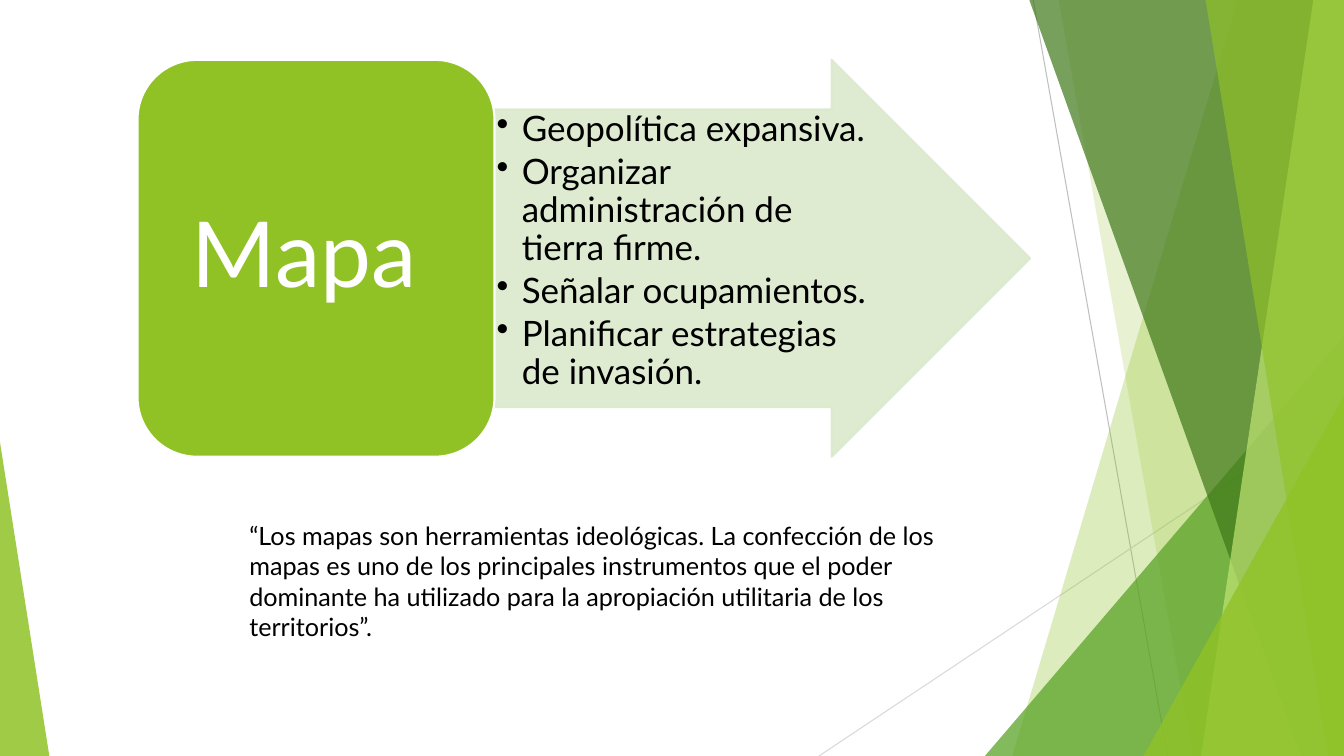
from dataclasses import dataclass

from lxml import etree
from pptx import Presentation, util as u
from pptx.dml.color import RGBColor
from pptx.enum import shapes, text
from pptx.oxml.ns import qn

PX = 9525
WIDTH, HEIGHT = 1280, 720
FONT = "Lato"
LIME, WHITE, BLACK, PALE = "90C226", "FFFFFF", "000000", "DBE9CD"


@dataclass
class Ray:
    start: tuple[int, int]
    end: tuple[int, int]
    colour: str


@dataclass
class Ribbon:
    """A band from its slanted left side to the right edge of the slide."""
    top: int
    foot: int
    colour: str
    opacity: int


@dataclass
class Wedge:
    """A triangle standing on the bottom edge, its apex at a share of its width."""
    left: int
    top: int
    width: int
    apex: int
    colour: str
    opacity: int


RAYS = [
    Ray((984, 0), (1112, HEIGHT), "BFBFBF"),
    Ray((WIDTH, 387), (780, HEIGHT), "D9D9D9"),
]
FACETS = [
    Ribbon(1179, 964, LIME, 30),
    Ribbon(1008, 1136, LIME, 20),
    Wedge(938, 320, 342, 1, "54A021", 72),
    Ribbon(980, 1239, "3F7819", 70),
    Ribbon(1251, 1144, "C0E474", 70),
    Ribbon(1148, 1265, LIME, 65),
    Wedge(1089, 377, 191, 1, LIME, 80),
    Wedge(0, 421, 47, 0, LIME, 85),
]
PURPOSES = [
    "Geopolítica expansiva.",
    "Organizar administración de tierra firme.",
    "Señalar ocupamientos.",
    "Planificar estrategias de invasión.",
]
QUOTE = (
    "“Los mapas son herramientas ideológicas. La confección de los mapas es uno "
    "de los principales instrumentos que el poder dominante ha utilizado para la "
    "apropiación utilitaria de los territorios”."
)


def px(*lengths: int) -> list[u.Emu]:
    return [u.Emu(length * PX) for length in lengths]


def paint(colour_format, colour: str, opacity: int = 100) -> None:
    colour_format.rgb = RGBColor.from_string(colour)
    if opacity < 100:
        swatch = colour_format._xFill.find(qn("a:srgbClr"))
        etree.SubElement(swatch, qn("a:alpha"), val=str(opacity * 1000))


def fill_shape(shape, colour: str, opacity: int = 100) -> None:
    shape.shadow.inherit = False
    shape.fill.solid()
    paint(shape.fill.fore_color, colour, opacity)


def outline(shape, colour: str, points: float, opacity: int = 100) -> None:
    shape.line.width = u.Pt(points)
    shape.line.fill.solid()
    paint(shape.line.color, colour, opacity)


def draw_ray(page, ray: Ray) -> None:
    line = page.shapes.add_connector(
        shapes.MSO_CONNECTOR.STRAIGHT, *px(*ray.start, *ray.end))
    outline(line, ray.colour, 0.75)
    etree.SubElement(line._element.spPr, qn("a:effectLst"))


def draw_facet(page, facet: Ribbon | Wedge) -> None:
    if isinstance(facet, Ribbon):
        builder = page.shapes.build_freeform(facet.top, -1, scale=PX)
        builder.add_line_segments(
            [(WIDTH, -1), (WIDTH, HEIGHT), (facet.foot, HEIGHT)])
        shape = builder.convert_to_shape()
    else:
        shape = page.shapes.add_shape(
            shapes.MSO_SHAPE.ISOSCELES_TRIANGLE,
            *px(facet.left, facet.top, facet.width, HEIGHT - facet.top))
        shape.adjustments[0] = facet.apex
    fill_shape(shape, facet.colour, facet.opacity)
    shape.line.fill.background()


def write(shape, words: str, size: int, colour: str, align, anchor) -> None:
    frame = shape.text_frame
    frame.text = words
    frame.word_wrap = True
    frame.vertical_anchor = anchor
    for para in frame.paragraphs:
        para.alignment = align
        for span in para.runs:
            span.font.name = FONT
            span.font.size = u.Pt(size)
            span.font.color.rgb = RGBColor.from_string(colour)


def set_margins(frame, side: int, end: int) -> None:
    frame.margin_left = frame.margin_right = u.Emu(side * PX)
    frame.margin_top = frame.margin_bottom = u.Emu(end * PX)


def add_bullet(para) -> None:
    para.level = 1
    para.line_spacing = 0.9
    para.space_after = u.Pt(3.75)
    properties = para._p.get_or_add_pPr()
    properties.set("marL", str(24 * PX))
    properties.set("indent", str(-24 * PX))
    etree.SubElement(properties, qn("a:buChar"), char="•")


def draw_arrow(page) -> None:
    arrow = page.shapes.add_shape(
        shapes.MSO_SHAPE.RIGHT_ARROW, *px(471, 57, 510, 378))
    arrow.adjustments[0] = 0.75
    arrow.adjustments[1] = 0.5
    fill_shape(arrow, PALE, 90)
    outline(arrow, PALE, 1.5, 90)
    write(arrow, "\n".join(PURPOSES), 25, BLACK,
          text.PP_ALIGN.LEFT, text.MSO_ANCHOR.TOP)
    set_margins(arrow.text_frame, 2, 2)
    for para in arrow.text_frame.paragraphs:
        add_bullet(para)


def draw_topic(page) -> None:
    topic = page.shapes.add_shape(
        shapes.MSO_SHAPE.ROUNDED_RECTANGLE, *px(131, 57, 340, 378))
    fill_shape(topic, LIME)
    outline(topic, WHITE, 1.5)
    write(topic, "Mapa ", 65, WHITE, text.PP_ALIGN.CENTER, text.MSO_ANCHOR.MIDDLE)
    set_margins(topic.text_frame, 26, 13)
    topic.text_frame.paragraphs[0].line_spacing = 0.9


def draw_quote(page) -> None:
    box = page.shapes.add_textbox(*px(228, 491, 680, 126))
    write(box, QUOTE, 18, BLACK, text.PP_ALIGN.LEFT, text.MSO_ANCHOR.TOP)
    box.text_frame.auto_size = text.MSO_AUTO_SIZE.SHAPE_TO_FIT_TEXT


def main() -> None:
    deck = Presentation()
    deck.slide_width, deck.slide_height = px(WIDTH, HEIGHT)
    page = deck.slides.add_slide(deck.slide_layouts[6])
    for ray in RAYS:
        draw_ray(page, ray)
    for facet in FACETS:
        draw_facet(page, facet)
    draw_arrow(page)
    draw_topic(page)
    draw_quote(page)
    deck.save("out.pptx")


if __name__ == "__main__":
    main()
